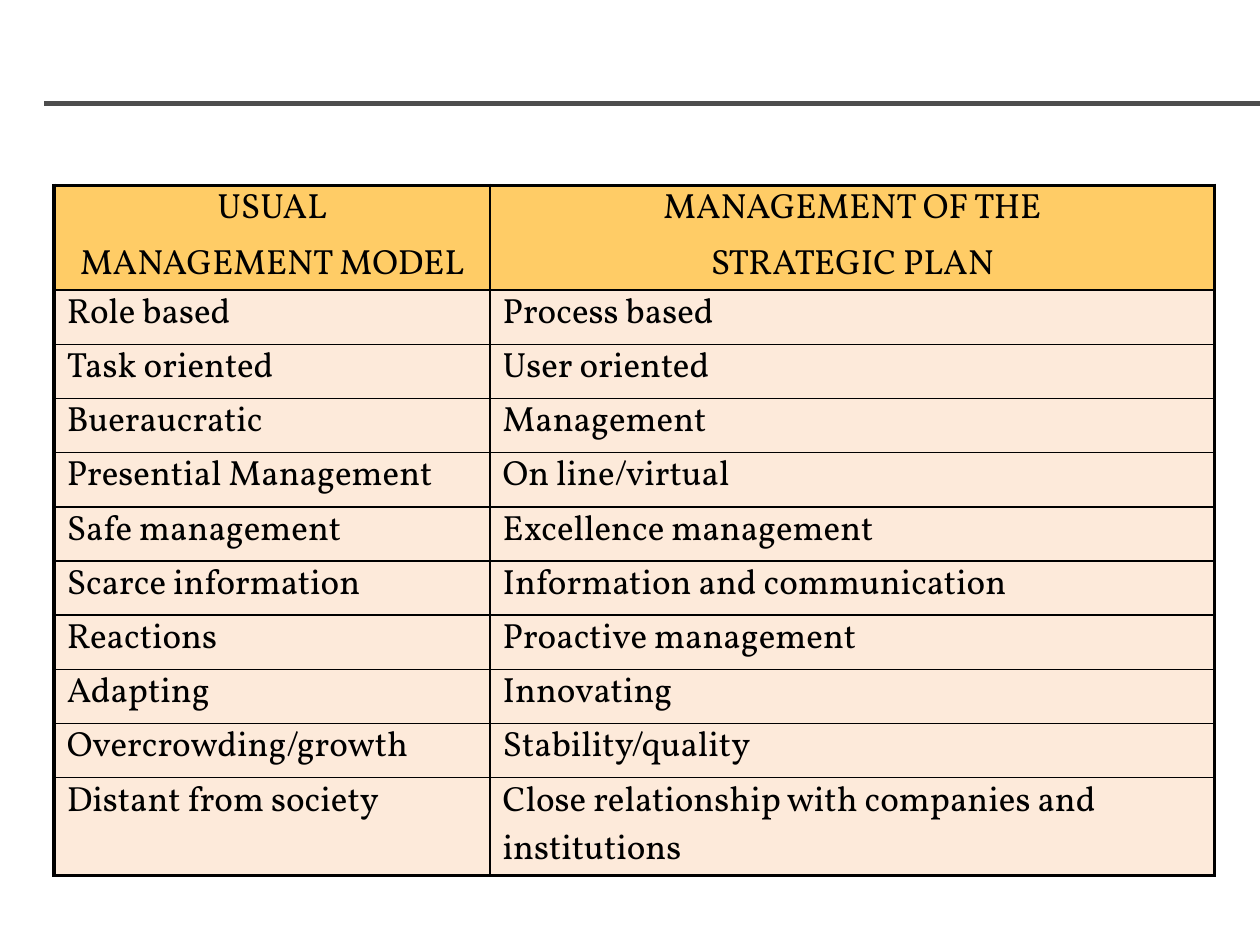
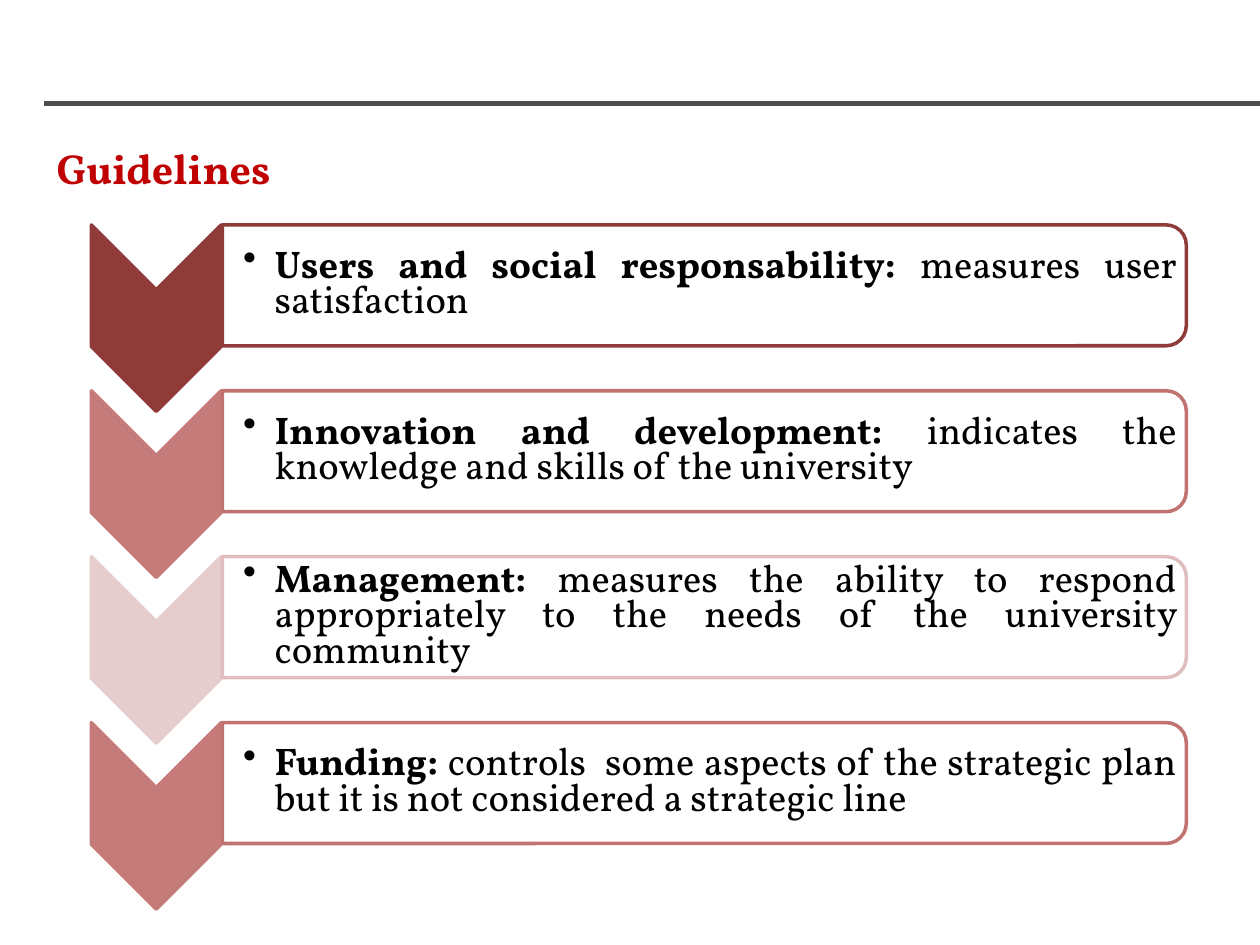
"""Build two slides: a comparison of management models and the plan's guidelines."""
from dataclasses import dataclass

from lxml.etree import SubElement
from pptx import Presentation
from pptx.dml.color import RGBColor
from pptx.enum.dml import MSO_LINE
from pptx.enum.shapes import MSO_CONNECTOR, MSO_SHAPE
from pptx.enum.text import MSO_ANCHOR, PP_ALIGN
from pptx.oxml.ns import qn
from pptx.util import Inches, Pt

FONT = "Vollkorn"
BLACK = RGBColor(0x00, 0x00, 0x00)
WHITE = RGBColor(0xFF, 0xFF, 0xFF)
RULE_GREY = RGBColor(0x4D, 0x4D, 0x4D)
TITLE_RED = RGBColor(0xC0, 0x00, 0x00)
HEADER_GOLD = RGBColor(0xFF, 0xCC, 0x66)
CELL_PEACH = RGBColor(0xFD, 0xEA, 0xDA)
DARK_RED = RGBColor(0x8E, 0x3B, 0x39)
MID_RED = RGBColor(0xC4, 0x7B, 0x79)
MID_EDGE = RGBColor(0xC1, 0x73, 0x71)
PALE_RED = RGBColor(0xE6, 0xCD, 0xCD)
PALE_EDGE = RGBColor(0xE0, 0xBE, 0xBE)

OUTER_BORDER = Pt(2.25)
INNER_BORDER = Pt(1)
COLUMN_WIDTHS = (Inches(3.46), Inches(5.75))
HEADER_HEIGHT, ROW_HEIGHT, LAST_HEIGHT = Inches(0.82), Inches(0.43), Inches(0.77)
FIRST_CHEVRON_TOP, LAST_CHEVRON_TOP = Inches(2.01), Inches(5.96)

COMPARISON = (
    ("USUAL\nMANAGEMENT MODEL", "MANAGEMENT OF THE\nSTRATEGIC PLAN"),
    ("Role based", "Process based"),
    ("Task oriented", "User oriented"),
    ("Bueraucratic", "Management"),
    ("Presential Management", "On line/virtual"),
    ("Safe management", "Excellence management"),
    ("Scarce information", "Information and communication"),
    ("Reactions", "Proactive management"),
    ("Adapting", "Innovating"),
    ("Overcrowding/growth", "Stability/quality"),
    ("Distant from society", "Close relationship with companies and institutions"),
)


@dataclass(frozen=True)
class Guideline:
    """One strategic line with its colours."""

    name: str
    meaning: str
    fill: RGBColor
    edge: RGBColor


GUIDELINES = (
    Guideline("Users and social responsability: ", "measures user satisfaction",
              DARK_RED, DARK_RED),
    Guideline("Innovation and development: ",
              "indicates the knowledge and skills of the university",
              MID_RED, MID_EDGE),
    Guideline("Management: ",
              "measures the ability to respond appropriately to the needs "
              "of the university community", PALE_RED, PALE_EDGE),
    Guideline("Funding: ",
              "controls  some aspects of the strategic plan but it is not "
              "considered a strategic line", MID_RED, MID_EDGE),
)


def style_font(font, size: float, color: RGBColor, bold: bool = False) -> None:
    """Apply the shared typeface with a size, colour and weight."""
    font.name = FONT
    font.size = Pt(size)
    font.bold = bold
    font.color.rgb = color


def set_indent(para, hanging: float, left: float) -> None:
    """Give a paragraph a left margin and a hanging first line."""
    properties = para._p.get_or_add_pPr()
    properties.set("marL", str(Inches(left)))
    properties.set("indent", str(-Inches(hanging)))


def add_master_rule(deck, page) -> None:
    """Draw the grey rule and hand it to the slide master."""
    rule = page.shapes.add_connector(
        MSO_CONNECTOR.STRAIGHT, Inches(0.35), Inches(0.82), Inches(10), Inches(0.82))
    rule.line.color.rgb = RULE_GREY
    rule.line.width = Pt(3)
    SubElement(rule.element.spPr, qn("a:effectLst"))
    rule.element.nvCxnSpPr.cNvPr.id = 90
    deck.slide_master.shapes.element.append(rule.element)


def set_borders(cell, widths: dict[str, int]) -> None:
    """Draw black borders on the given sides of a cell, before its fill."""
    properties = cell._tc.get_or_add_tcPr()
    for side, width in widths.items():
        border = SubElement(properties, qn(f"a:{side}"), w=str(width))
        fill = SubElement(border, qn("a:solidFill"))
        SubElement(fill, qn("a:srgbClr"), val=str(BLACK))


def fill_cell(cell, text: str, is_header: bool) -> None:
    """Write and format one table cell."""
    cell.fill.solid()
    cell.fill.fore_color.rgb = HEADER_GOLD if is_header else CELL_PEACH
    cell.margin_left = cell.margin_right = Inches(0.1)
    cell.margin_top = cell.margin_bottom = 0
    cell.vertical_anchor = MSO_ANCHOR.TOP
    cell.text_frame.text = text
    for index, para in enumerate(cell.text_frame.paragraphs):
        para.alignment = PP_ALIGN.CENTER if is_header else PP_ALIGN.LEFT
        if index:
            para.space_before = Pt(4)
        for span in para.runs:
            style_font(span.font, 20, BLACK)


def add_comparison(page) -> None:
    """Add the table that sets both management models side by side."""
    last_row, last_column = len(COMPARISON) - 1, len(COLUMN_WIDTHS) - 1
    table = page.shapes.add_table(
        last_row + 1, last_column + 1, Inches(0.43), Inches(1.47),
        Inches(9.21), Inches(5.5)).table
    table.horz_banding = False
    for column, width in zip(table.columns, COLUMN_WIDTHS):
        column.width = width
    for row_index, texts in enumerate(COMPARISON):
        table.rows[row_index].height = ROW_HEIGHT
        for column_index, text in enumerate(texts):
            cell = table.cell(row_index, column_index)
            on_edge = {"lnL": column_index == 0, "lnR": column_index == last_column,
                       "lnT": row_index == 0, "lnB": row_index == last_row}
            set_borders(cell, {side: OUTER_BORDER if outer else INNER_BORDER
                               for side, outer in on_edge.items()})
            fill_cell(cell, text, row_index == 0)
    table.rows[0].height = HEADER_HEIGHT
    table.rows[last_row].height = LAST_HEIGHT


def add_title(page, text: str) -> None:
    """Move the title placeholder under the rule and format it."""
    title = page.shapes.title
    title.left, title.top = Inches(0.35), Inches(1.08)
    title.width, title.height = Inches(9.18), Inches(0.51)
    title.text_frame.text = text
    title.text_frame.vertical_anchor = MSO_ANCHOR.TOP
    para = title.text_frame.paragraphs[0]
    para.alignment = PP_ALIGN.LEFT
    set_indent(para, 0.4, 0.4)
    style_font(para.runs[0].font, 24, TITLE_RED, True)


def add_turned_shape(page, kind: MSO_SHAPE, left: int, top: int, width: int,
                     height: int, fill: RGBColor, edge: RGBColor):
    """Add a flat preset shape turned a quarter clockwise."""
    shape = page.shapes.add_shape(kind, left, top, width, height)
    shape.rotation = 90
    shape.shadow.inherit = False
    shape.fill.solid()
    shape.fill.fore_color.rgb = fill
    shape.line.color.rgb = edge
    shape.line.width = Pt(2)
    shape.line.dash_style = MSO_LINE.SOLID
    return shape


def add_guideline(page, guideline: Guideline, top: int) -> None:
    """Add a chevron, its frame and its bulleted text."""
    add_turned_shape(page, MSO_SHAPE.CHEVRON, Inches(0.5), top, Inches(1.48),
                     Inches(1.03), guideline.fill, guideline.fill)
    frame = add_turned_shape(
        page, MSO_SHAPE.ROUND_2_SAME_RECTANGLE, Inches(5.11), top - Inches(3.57),
        Inches(0.96), Inches(7.65), WHITE, guideline.edge)
    white = frame.element.spPr.find(qn("a:solidFill")).find(qn("a:srgbClr"))
    SubElement(white, qn("a:alpha"), val="90000")

    box = page.shapes.add_textbox(
        Inches(1.76), top - Inches(0.18), Inches(7.6), Inches(0.87))
    text_frame = box.text_frame
    text_frame.word_wrap = True
    text_frame.vertical_anchor = MSO_ANCHOR.MIDDLE
    text_frame.margin_left = Inches(0.17)
    text_frame.margin_top = text_frame.margin_right = Inches(0.02)
    text_frame.margin_bottom = Inches(0.02)
    para = text_frame.paragraphs[0]
    para.alignment = PP_ALIGN.JUSTIFY
    para.line_spacing = 0.77
    set_indent(para, 0.25, 0.25)
    SubElement(para._p.get_or_add_pPr(), qn("a:buChar"), char="•")
    for text, bold in ((guideline.name, True), (guideline.meaning, False)):
        span = para.add_run()
        span.text = text
        style_font(span.font, 22, BLACK, bold)


def main() -> None:
    """Build and save the deck."""
    deck = Presentation()
    deck.slide_width, deck.slide_height = Inches(10), Inches(7.5)

    comparison_page = deck.slides.add_slide(deck.slide_layouts[6])
    add_master_rule(deck, comparison_page)
    add_comparison(comparison_page)

    guidelines_page = deck.slides.add_slide(deck.slide_layouts[5])
    add_title(guidelines_page, "Guidelines")
    step = (LAST_CHEVRON_TOP - FIRST_CHEVRON_TOP) / (len(GUIDELINES) - 1)
    for index, guideline in enumerate(GUIDELINES):
        add_guideline(guidelines_page, guideline, round(FIRST_CHEVRON_TOP + index * step))

    deck.save("out.pptx")


if __name__ == "__main__":
    main()
